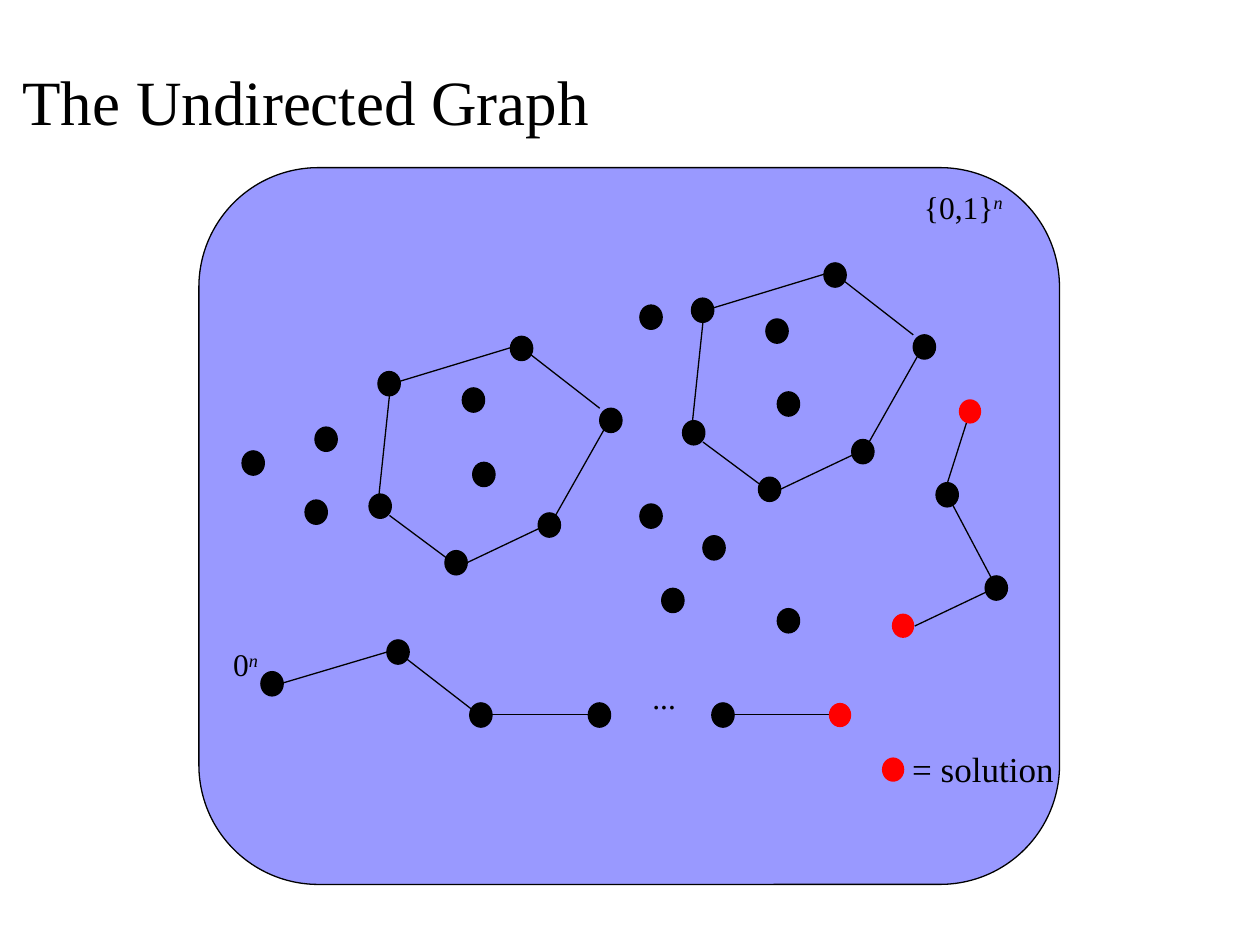
from lxml.etree import SubElement
from pptx import Presentation
from pptx.dml.color import RGBColor
from pptx.enum.shapes import MSO_CONNECTOR, MSO_SHAPE
from pptx.enum.text import MSO_ANCHOR, PP_ALIGN
from pptx.oxml.ns import qn
from pptx.util import Cm, Pt

BLACK = RGBColor(0x00, 0x00, 0x00)
RED = RGBColor(0xFF, 0x00, 0x00)
LAVENDER = RGBColor(0x99, 0x99, 0xFF)

# All coordinates are in centimetres
NODE_WIDTH, NODE_HEIGHT = 0.45, 0.49
CYCLE_SHIFTS = [(0, 0), (6.32, -1.48)]
CYCLE_NODES = [(7.62, 7.49), (10.29, 6.78), (12.09, 8.23),
               (10.85, 10.34), (8.97, 11.1), (7.44, 9.96)]
CYCLE_EDGES = [
    (7.85, 7.75, 10.29, 7.01), (10.52, 7.01, 12.09, 8.23),
    (12.29, 8.46, 11.2, 10.39), (11, 10.59, 9.4, 11.35),
    (9.14, 11.35, 7.85, 10.39), (7.62, 10.16, 7.85, 7.98),
]
PATH_NODES = [(5.26, 13.54), (7.8, 12.9), (9.47, 14.17), (11.86, 14.17),
              (14.35, 14.17), (18.87, 9.73), (19.86, 11.61)]
PATH_EDGES = [
    (5.46, 13.84, 7.85, 13.13), (8, 13.13, 9.55, 14.33),
    (9.7, 14.4, 11.96, 14.4), (14.55, 14.4, 16.84, 14.4),
    (19.56, 8.28, 19.1, 9.73), (19.1, 9.98, 19.99, 11.66),
    (20.04, 11.86, 18.44, 12.62),
]
ISOLATED_NODES = [
    (12.9, 10.16), (12.9, 6.15), (4.88, 9.09), (6.35, 8.61), (6.15, 10.08),
    (9.32, 7.82), (9.53, 9.32), (15.44, 6.43), (15.67, 7.9),
    (14.17, 10.8), (13.34, 11.86), (15.67, 12.27),
]
SOLUTIONS = [(16.71, 14.17), (17.98, 12.37), (19.33, 8.05)]
LEGEND_NODE = (17.78, 15.27)


class GraphPage:
    """Holds the style and the current slide."""

    font_name = "Times New Roman"
    line_width = Pt(0.75)

    def __init__(self, page):
        self.page = page

    def add_span(self, para, text, size, **extra):
        span = para.add_run()
        span.text = text
        values = {"name": self.font_name, "size": Pt(size), **extra}
        for name, value in values.items():
            setattr(span.font, name, value)
        span.font.color.rgb = BLACK
        return span

    def title(self, text, left, top, width, height):
        box = self.page.shapes.title
        place = {"left": left, "top": top, "width": width, "height": height}
        for name, value in place.items():
            setattr(box, name, Cm(value))
        box.text_frame.vertical_anchor = MSO_ANCHOR.MIDDLE
        para = box.text_frame.paragraphs[0]
        para.alignment = PP_ALIGN.LEFT
        self.add_span(para, text, 36)

    def shape(self, kind, left, top, width, height, color, outlined=True):
        shape = self.page.shapes.add_shape(
            kind, Cm(left), Cm(top), Cm(width), Cm(height))
        shape.shadow.inherit = False
        shape.fill.solid()
        shape.fill.fore_color.rgb = color
        if outlined:
            shape.line.color.rgb = BLACK
            shape.line.width = self.line_width
        else:
            shape.line.fill.background()

    def node(self, left, top, color=BLACK):
        self.shape(MSO_SHAPE.OVAL, left, top, NODE_WIDTH, NODE_HEIGHT,
                   color, outlined=color == BLACK)

    def edge(self, *ends):
        line = self.page.shapes.add_connector(
            MSO_CONNECTOR.STRAIGHT, *[Cm(end) for end in ends])
        line.line.color.rgb = BLACK
        line.line.width = self.line_width
        SubElement(line._element.spPr, qn("a:effectLst"))

    def label(self, text, left, top, width, height=1.02, size=18,
              power="", italic=False, align=PP_ALIGN.CENTER, wrap=True):
        box = self.page.shapes.add_textbox(
            Cm(left), Cm(top), Cm(width), Cm(height))
        box.text_frame.word_wrap = wrap
        para = box.text_frame.paragraphs[0]
        para.alignment = align
        self.add_span(para, text, size, italic=italic)
        if power:
            span = self.add_span(para, power, size, italic=True)
            span._r.get_or_add_rPr().set("baseline", "30000")


def main():
    deck = Presentation()
    deck.slide_width, deck.slide_height = Cm(25.4), Cm(19.05)
    graph = GraphPage(deck.slides.add_slide(deck.slide_layouts[5]))
    graph.title("The Undirected Graph", 0.2, 0.43, 24.33, 3.18)

    # Vertex set
    graph.shape(MSO_SHAPE.ROUNDED_RECTANGLE, 4.01, 3.38, 17.35, 14.45, LAVENDER)
    graph.label("{0,1}", 16.41, 3.66, 6.02, power="n")

    # Two equal cycles
    for dx, dy in CYCLE_SHIFTS:
        for x1, y1, x2, y2 in CYCLE_EDGES:
            graph.edge(x1 + dx, y1 + dy, x2 + dx, y2 + dy)
        for x, y in CYCLE_NODES:
            graph.node(x + dx, y + dy)

    # Paths, isolated nodes and solutions
    for ends in PATH_EDGES:
        graph.edge(*ends)
    for spot in PATH_NODES + ISOLATED_NODES:
        graph.node(*spot)
    for spot in SOLUTIONS:
        graph.node(*spot, color=RED)
    graph.label("0", 4.24, 12.88, 1.42, power="n")
    graph.label("...", 12.07, 13.54, 2.67, italic=True)

    # Legend
    graph.node(*LEGEND_NODE, color=RED)
    graph.label("= solution", 18.14, 14.94, 3.38, 1.12, size=20,
                align=PP_ALIGN.LEFT, wrap=False)

    deck.save("out.pptx")


if __name__ == "__main__":
    main()
